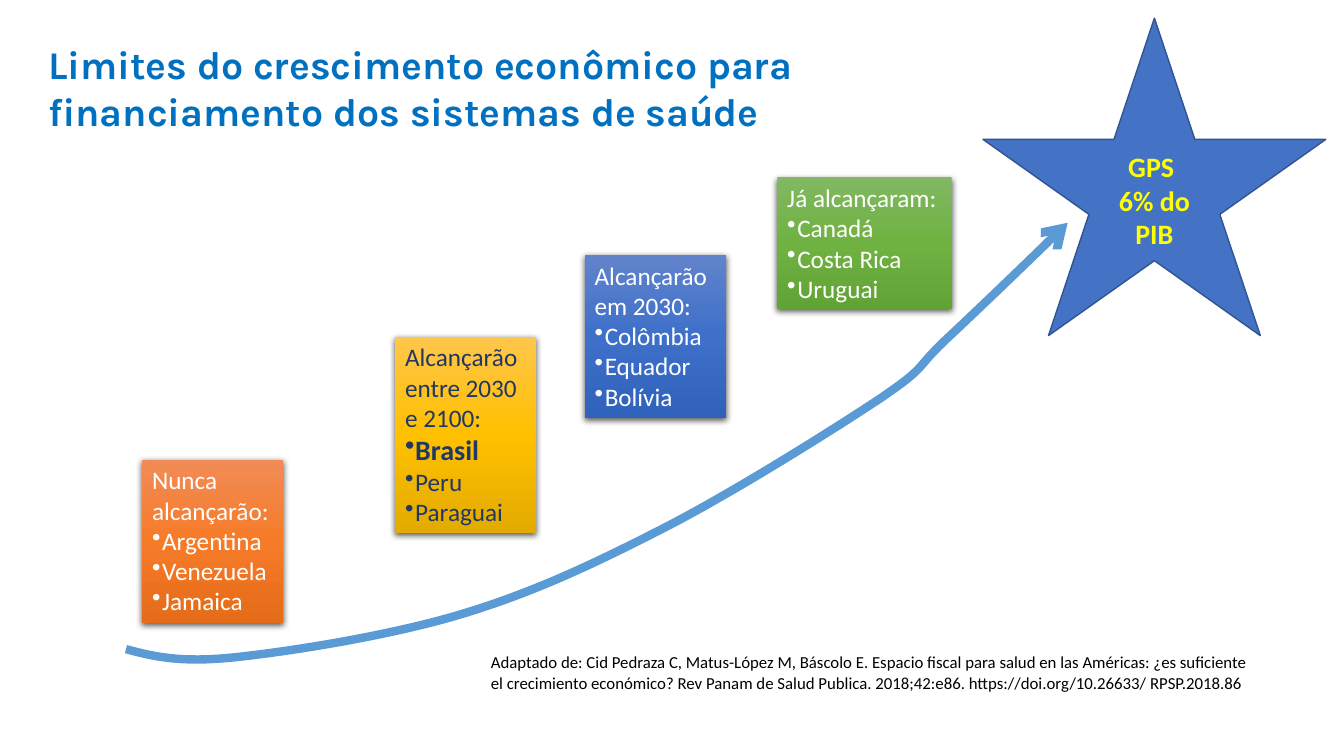
"""Builds the slide on economic growth limits for funding health systems."""
import copy
import pptx
import pptx.util
import pptx.dml.color
import pptx.enum.shapes
import pptx.enum.text
import pptx.oxml
import pptx.oxml.ns

RGB = pptx.dml.color.RGBColor
KIND = pptx.enum.shapes.MSO_SHAPE
ANCHOR = pptx.enum.text.MSO_ANCHOR
ALIGN = pptx.enum.text.PP_ALIGN
FIT = pptx.enum.text.MSO_AUTO_SIZE
NS = pptx.oxml.ns.nsdecls("a")
PX = 9144

WHITE = RGB(0xFF, 0xFF, 0xFF)
BLACK = RGB(0x00, 0x00, 0x00)
YELLOW = RGB(0xFF, 0xFF, 0x00)
NAVY = RGB(0x20, 0x38, 0x64)
BLUE = RGB(0x00, 0x70, 0xC0)
STAR = RGB(0x44, 0x72, 0xC4)
EDGE = RGB(0x32, 0x54, 0x91)
CURVE = RGB(0x5B, 0x9B, 0xD5)
GREENS = RGB(0x81, 0xB8, 0x61), RGB(0x6F, 0xB2, 0x42), RGB(0x62, 0xA3, 0x36)
BLUES = RGB(0x61, 0x83, 0xCB), RGB(0x3E, 0x70, 0xCA), RGB(0x30, 0x62, 0xBB)
GOLDS = RGB(0xFF, 0xC6, 0x4B), RGB(0xFF, 0xC0, 0x00), RGB(0xE3, 0xAB, 0x00)
REDS = RGB(0xF1, 0x8C, 0x57), RGB(0xF6, 0x7B, 0x28), RGB(0xE5, 0x6C, 0x19)


def put(frame, lines, size, color, name="Calibri", bold=False, align=ALIGN.LEFT):
    """Write one paragraph per line, with a bullet where a line starts with one."""
    frame.word_wrap = True
    for num, line in enumerate(lines):
        para = frame.paragraphs[0] if num == 0 else frame.add_paragraph()
        para.alignment = align
        run = para.add_run()
        run.text = line.removeprefix("•")
        look = {"size": pptx.util.Pt(size), "name": name, "bold": bold}
        if run.text == "Brasil":
            look.update(size=pptx.util.Pt(20), bold=True)
        for key, value in look.items():
            setattr(run.font, key, value)
        run.font.color.rgb = color
        if line.startswith("•"):
            props = para._p.get_or_add_pPr()
            props.set("marL", str(10 * PX))
            props.set("indent", str(-10 * PX))
            props.append(pptx.oxml.parse_xml(f'<a:buChar {NS} char="•"/>'))


deck = pptx.Presentation()
deck.slide_width, deck.slide_height = 1333 * PX, 750 * PX
slide = deck.slides.add_slide(deck.slide_layouts[6])
shapes = slide.shapes

star = shapes.add_shape(KIND.STAR_5_POINT, 975 * PX, 18 * PX, 340 * PX, 315 * PX)
star.shadow.inherit = False
star.fill.solid()
star.fill.fore_color.rgb = STAR
star.line.color.rgb = EDGE
star.line.width = pptx.util.Pt(1)
star.text_frame.vertical_anchor = ANCHOR.MIDDLE
put(star.text_frame, ["GPS ", "6% do PIB"], 20, YELLOW, bold=True, align=ALIGN.CENTER)

TITLE = "Limites do crescimento econômico para financiamento dos sistemas de saúde"
CREDIT = (
    "Adaptado de: Cid Pedraza C, Matus-López M, Báscolo E. Espacio fiscal para salud "
    "en las Américas: ¿es suficiente el crecimiento económico? Rev Panam de Salud "
    "Publica. 2018;42:e86. https://doi.org/10.26633/ RPSP.2018.86"
)
texts = [
    ((38, 35, 925, 104), TITLE, 28, BLUE, "Karla", True),
    ((477, 642, 780, 50), CREDIT, 12, BLACK, "Calibri", False),
]
for place, text, *look in texts:
    frame = shapes.add_textbox(*(n * PX for n in place)).text_frame
    frame.auto_size = FIT.SHAPE_TO_FIT_TEXT
    put(frame, [text], *look)

groups = [
    ((771, 176, 173, 131), GREENS, WHITE,
     ["Já alcançaram:", "•Canadá", "•Costa Rica", "•Uruguai"]),
    ((580, 253, 140, 162), BLUES, WHITE,
     ["Alcançarão", "em 2030:", "•Colômbia", "•Equador", "•Bolívia"]),
    ((392, 334, 140, 195), GOLDS, NAVY,
     ["Alcançarão", "entre 2030 e 2100:", "•Brasil", "•Peru", "•Paraguai"]),
    ((141, 456, 140, 162), REDS, WHITE,
     ["Nunca alcançarão:", "•Argentina", "•Venezuela", "•Jamaica"]),
]
for place, tints, color, lines in groups:
    box = shapes.add_shape(KIND.RECTANGLE, *(n * PX for n in place))
    box.line.fill.background()
    box.fill.gradient()
    box.fill.gradient_angle = 270
    props = box._element.spPr
    stops = props.find(".//" + pptx.oxml.ns.qn("a:gsLst"))
    stops.insert(1, copy.deepcopy(stops[0]))
    for stop, spot, tint in zip(box.fill.gradient_stops, (0, 0.5, 1), tints):
        stop.position = spot
        stop.color.rgb = tint
    box.shadow.inherit = False
    props.find(pptx.oxml.ns.qn("a:effectLst")).append(pptx.oxml.parse_xml(
        f'<a:outerShdw {NS} blurRad="57150" dist="19050" dir="5400000" algn="ctr" '
        'rotWithShape="0"><a:srgbClr val="000000"><a:alpha val="63000"/></a:srgbClr>'
        "</a:outerShdw>"))
    box.text_frame.vertical_anchor = ANCHOR.TOP
    box.text_frame.auto_size = FIT.SHAPE_TO_FIT_TEXT
    put(box.text_frame, lines, 18, color)

knots = [
    (125, 644), (151, 651), (178, 658), (234, 652), (290, 646), (391, 630),
    (462, 608), (534, 586), (596, 556), (664, 521), (733, 485), (830, 424),
    (875, 394), (920, 363), (906, 368), (936, 339), (967, 310), (1013, 266),
    (1059, 221),
]
STEPS = 16
trace = []
for first in range(0, len(knots) - 1, 3):
    for step in range(1, STEPS + 1):
        t = step / STEPS
        parts = (1 - t) ** 3, 3 * t * (1 - t) ** 2, 3 * t * t * (1 - t), t ** 3
        spots = zip(*knots[first:first + 4])
        trace.append([sum(a * b for a, b in zip(parts, axis)) * PX for axis in spots])
pen = shapes.build_freeform(knots[0][0] * PX, knots[0][1] * PX)
pen.add_line_segments(trace, close=False)
curve = pen.convert_to_shape()
curve.shadow.inherit = False
curve.fill.background()
curve.line.color.rgb = CURVE
curve.line.width = pptx.util.Pt(6)
for tag in ("<a:round {}/>", '<a:tailEnd {} type="arrow"/>'):
    curve.line._get_or_add_ln().append(pptx.oxml.parse_xml(tag.format(NS)))

deck.save("out.pptx")
